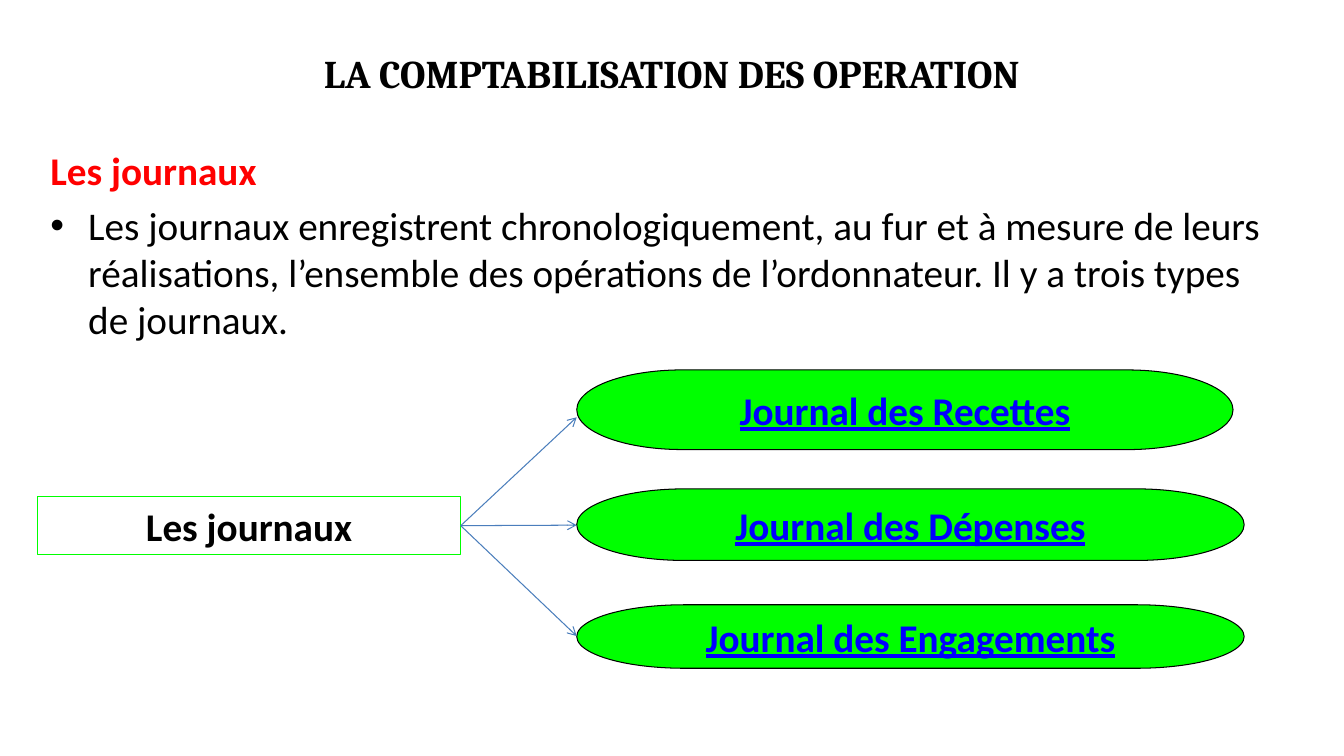
"""Build the slide presenting the three types of accounting journals."""
from dataclasses import dataclass

from lxml import etree
from pptx import Presentation
from pptx.dml.color import RGBColor
from pptx.enum.shapes import MSO_CONNECTOR, MSO_SHAPE
from pptx.enum.text import MSO_ANCHOR, MSO_AUTO_SIZE, PP_ALIGN
from pptx.oxml.ns import qn
from pptx.util import Inches, Pt

STRAIGHT = MSO_CONNECTOR.STRAIGHT
RECTANGLE = MSO_SHAPE.RECTANGLE
TERMINATOR = MSO_SHAPE.FLOWCHART_TERMINATOR
TOP, MIDDLE = MSO_ANCHOR.TOP, MSO_ANCHOR.MIDDLE
LEFT, CENTER = PP_ALIGN.LEFT, PP_ALIGN.CENTER
NO_FIT = MSO_AUTO_SIZE.NONE

TITLE = "LA COMPTABILISATION DES OPERATION"
HEADING = "Les journaux"
DEFINITION = (
    "Les journaux enregistrent chronologiquement, au fur et à mesure de leurs "
    "réalisations, l’ensemble des opérations de l’ordonnateur. "
    "Il y a trois types de journaux."
)
SOURCE = "Les journaux"
JOURNALS = [
    {"name": "Journal des Recettes", "top": 3.67, "width": 6.51, "height": 0.79, "target": 4.14},
    {"name": "Journal des Dépenses", "top": 4.85, "width": 6.62, "height": 0.71, "target": 5.21},
    {"name": "Journal des Engagements", "top": 6, "width": 6.62, "height": 0.63, "target": 6.31},
]

SLIDE_SIZE = (13.33, 7.5)
TITLE_AREA = (0.82, 0.24, 11.68, 0.97)
BODY_AREA = (0.4, 1.4, 12.4, 5.85)
SOURCE_AREA = (0.37, 4.93, 4.2, 0.57)
JOURNAL_LEFT = 5.72


@dataclass(frozen=True)
class Theme:
    """Colours, fonts and sizes of the slide."""

    black: str = "000000"
    red: str = "FF0000"
    green: str = "00FF00"
    link: str = "0000FF"
    arrow: str = "4B7EBC"
    title_font: str = "Cambria"
    text_font: str = "Calibri"
    size: int = 28
    line: float = 0.75


THEME = Theme()


def colour(value):
    """Turn a hex string into a colour."""
    return RGBColor.from_string(value)


def place(box, area):
    """Move and size a box in inches."""
    for name, value in zip(("left", "top", "width", "height"), area):
        setattr(box, name, Inches(value))


def write(para, text, ink, align=LEFT, **changes):
    """Fill a paragraph with one formatted run."""
    para.alignment = align
    span = para.add_run()
    span.text = text
    formats = {"name": THEME.text_font, "size": Pt(THEME.size), "bold": True, **changes}
    for name, value in formats.items():
        setattr(span.font, name, value)
    span.font.color.rgb = colour(ink)


def set_frame(frame, anchor, wrap=True):
    """Set the anchor and wrapping of a text frame."""
    formats = {"auto_size": NO_FIT, "vertical_anchor": anchor, "word_wrap": wrap}
    for name, value in formats.items():
        setattr(frame, name, value)


def add_box(page, kind, area, outline, fill=None):
    """Add a flat outlined shape."""
    box = page.shapes.add_shape(kind, *map(Inches, area))
    box.shadow.inherit = False
    box.line.color.rgb = colour(outline)
    box.line.width = Pt(THEME.line)
    if fill:
        box.fill.solid()
        box.fill.fore_color.rgb = colour(fill)
    else:
        box.fill.background()
    return box


def add_arrow(page, start, end):
    """Add a thin line with an open arrowhead."""
    arrow = page.shapes.add_connector(STRAIGHT, *map(Inches, start + end))
    arrow.line.color.rgb = colour(THEME.arrow)
    arrow.line.width = Pt(THEME.line)
    etree.SubElement(arrow.line._get_or_add_ln(), qn("a:tailEnd"), type="arrow")
    etree.SubElement(arrow._element.spPr, qn("a:effectLst"))


def add_texts(page):
    """Fill the title and body placeholders."""
    title, body = page.placeholders
    place(title, TITLE_AREA)
    set_frame(title.text_frame, MIDDLE)
    write(title.text_frame.paragraphs[0], TITLE, THEME.black, CENTER, name=THEME.title_font)
    place(body, BODY_AREA)
    set_frame(body.text_frame, TOP)
    heading = body.text_frame.paragraphs[0]
    write(heading, HEADING, THEME.red)
    etree.SubElement(heading._p.get_or_add_pPr(), qn("a:buNone"))
    write(body.text_frame.add_paragraph(), DEFINITION, THEME.black, bold=False)


def add_diagram(page):
    """Link the source box to each journal."""
    left, top, width, height = SOURCE_AREA
    source = add_box(page, RECTANGLE, SOURCE_AREA, THEME.green)
    set_frame(source.text_frame, MIDDLE)
    write(source.text_frame.paragraphs[0], SOURCE, THEME.black, CENTER)
    start = (left + width, top + height / 2)
    for journal in JOURNALS:
        area = (JOURNAL_LEFT, journal["top"], journal["width"], journal["height"])
        box = add_box(page, TERMINATOR, area, THEME.black, THEME.green)
        set_frame(box.text_frame, MIDDLE, wrap=False)
        write(box.text_frame.paragraphs[0], journal["name"], THEME.link, CENTER, underline=True)
        add_arrow(page, start, (JOURNAL_LEFT, journal["target"]))


def main():
    """Build and save the deck."""
    deck = Presentation()
    deck.slide_width, deck.slide_height = map(Inches, SLIDE_SIZE)
    page = deck.slides.add_slide(deck.slide_layouts[1])
    add_texts(page)
    add_diagram(page)
    deck.save("out.pptx")


if __name__ == "__main__":
    main()
